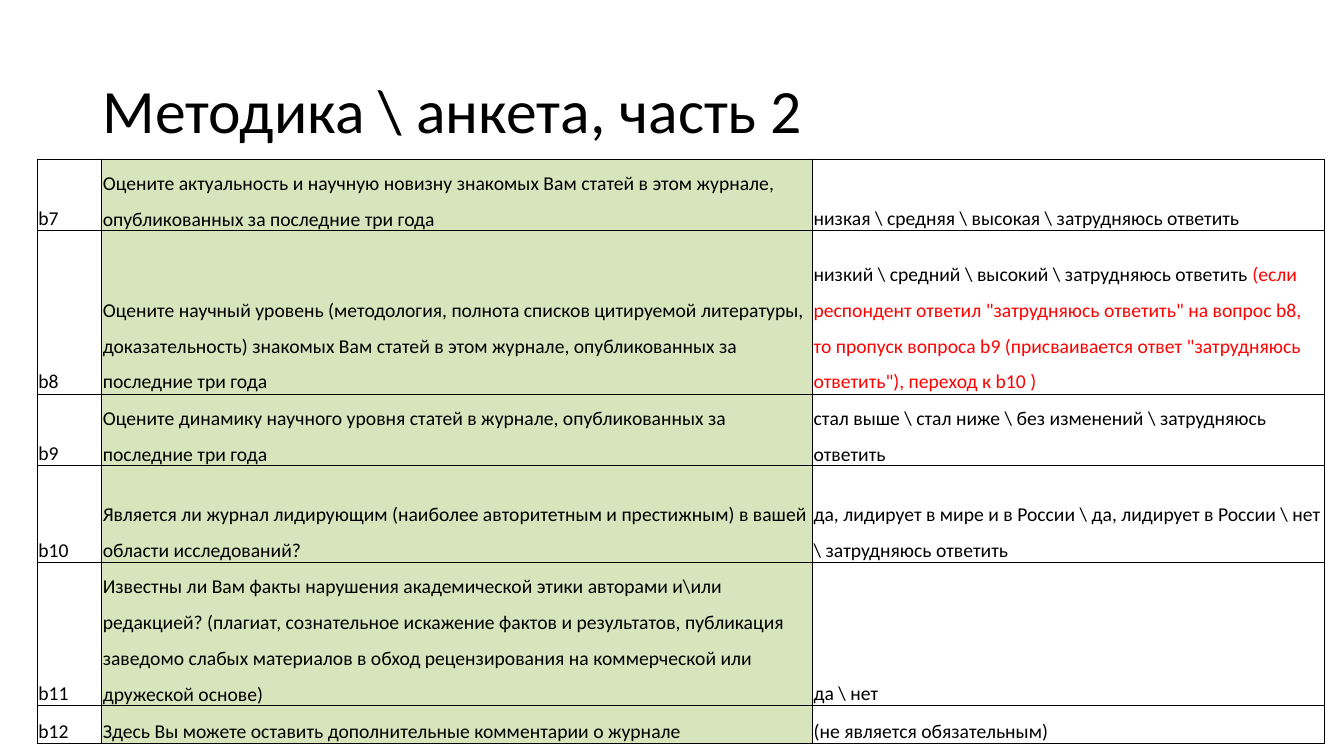
"""Build the questionnaire slide: a title above a table of questions b7 to b12."""
from lxml.etree import SubElement
from pptx import Presentation
from pptx.dml.color import RGBColor
from pptx.enum.text import MSO_ANCHOR as Anchor
from pptx.oxml.ns import qn
from pptx.util import Inches, Pt

BLACK, RED, GREEN = "000000", "FF0000", "D8E4BC"
COLUMN_WIDTHS = [0.64, 7.05, 5.08]
ROW_HEIGHTS = [0.67, 1.62, 0.67, 0.96, 1.42, 0.38]
FIRST_NUMBER = 7
QUESTIONS = [
    ("Оцените актуальность и научную новизну знакомых Вам статей в этом журнале, "
     "опубликованных за последние три года",
     "низкая \\ средняя \\ высокая \\ затрудняюсь ответить", ""),
    ("Оцените научный уровень (методология, полнота списков цитируемой литературы, "
     "доказательность) знакомых Вам статей в этом журнале, опубликованных за последние три года",
     "низкий \\ средний \\ высокий \\ затрудняюсь ответить ",
     '(если респондент ответил "затрудняюсь ответить" на вопрос b8, то пропуск вопроса b9 '
     '(присваивается ответ "затрудняюсь ответить"), переход к b10 )'),
    ("Оцените динамику научного уровня статей в журнале, опубликованных за последние три года",
     "стал выше \\ стал ниже \\ без изменений \\ затрудняюсь ответить", ""),
    ("Является ли журнал лидирующим (наиболее авторитетным и престижным) "
     "в вашей области исследований?",
     "да, лидирует в мире и в России \\ да, лидирует в России \\ нет \\ затрудняюсь ответить", ""),
    ("Известны ли Вам факты нарушения академической этики авторами и\\или редакцией? "
     "(плагиат, сознательное искажение фактов и результатов, публикация заведомо слабых "
     "материалов в обход рецензирования на коммерческой или дружеской основе)",
     "да \\ нет", ""),
    ("Здесь Вы можете оставить дополнительные комментарии о журнале",
     "(не является обязательным)", ""),
]
CELL_FORMAT = {
    "vertical_anchor": Anchor.BOTTOM,
    "margin_left": Inches(0.01),
    "margin_right": Inches(0.01),
    "margin_top": Inches(0.01),
    "margin_bottom": Inches(0),
}


def color(value):
    return RGBColor.from_string(value)


def add_span(para, text, size, ink=BLACK):
    span = para.add_run()
    span.text = text
    for name, setting in {"name": "Calibri", "size": Pt(size)}.items():
        setattr(span.font, name, setting)
    span.font.color.rgb = color(ink)


deck = Presentation()
deck.slide_width, deck.slide_height = Inches(13.33), Inches(7.5)
page = deck.slides.add_slide(deck.slide_layouts[6])

title_box = page.shapes.add_textbox(Inches(0.92), Inches(0.4), Inches(11.5), Inches(1.45))
title_box.text_frame.word_wrap = True
title_box.text_frame.vertical_anchor = Anchor.MIDDLE
title_para = title_box.text_frame.paragraphs[0]
title_para.line_spacing = 0.9
add_span(title_para, "Методика \\ анкета, часть 2", 44)

table = page.shapes.add_table(
    len(ROW_HEIGHTS), len(COLUMN_WIDTHS), Inches(0.37), Inches(1.58),
    Inches(sum(COLUMN_WIDTHS)), Inches(sum(ROW_HEIGHTS))).table
table.first_row = table.horz_banding = False
for column, width in zip(table.columns, COLUMN_WIDTHS):
    column.width = Inches(width)

for index, (question, answer, remark) in enumerate(QUESTIONS):
    row = table.rows[index]
    row.height = Inches(ROW_HEIGHTS[index])
    contents = [f"b{FIRST_NUMBER + index}", question, answer]
    for position, (cell, text) in enumerate(zip(row.cells, contents)):
        for name, setting in CELL_FORMAT.items():
            setattr(cell, name, setting)
        para = cell.text_frame.paragraphs[0]
        para.line_spacing = 1.5
        add_span(para, text, 14)
        if remark and position == 2:
            add_span(para, remark, 14, RED)
        properties = cell._tc.get_or_add_tcPr()
        for side in ("lnL", "lnR", "lnT", "lnB"):
            border = SubElement(properties, qn(f"a:{side}"), w=str(Pt(1)))
            SubElement(SubElement(border, qn("a:solidFill")), qn("a:srgbClr"), val=BLACK)
        if position == 1:
            cell.fill.solid()
            cell.fill.fore_color.rgb = color(GREEN)
        else:
            cell.fill.background()

deck.save("out.pptx")
